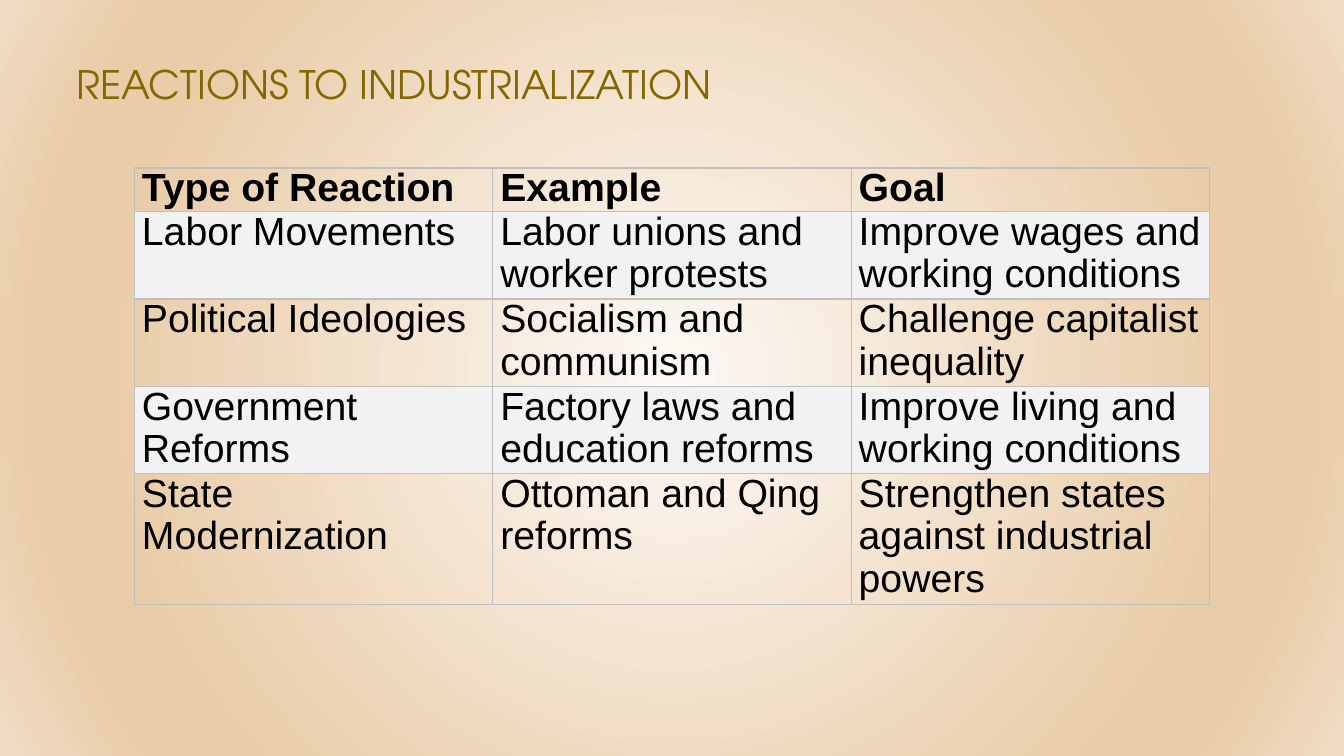
from dataclasses import dataclass

from lxml import etree
from pptx import Presentation
from pptx.dml.color import RGBColor
from pptx.enum.text import MSO_ANCHOR, PP_ALIGN
from pptx.oxml.ns import qn
from pptx.util import Pt

LEFT, TOP, BOTTOM = PP_ALIGN.LEFT, MSO_ANCHOR.TOP, MSO_ANCHOR.BOTTOM


@dataclass(frozen=True)
class Theme:
    title_font: str = "TeX Gyre Adventor"
    body_font: str = "Arial"
    size: int = 28
    title_color: str = "846700"
    text_color: str = "000000"
    band: str = "F2F2F2"
    border: str = "BFBFBF"
    glow: tuple = ((0, "FDF9F5"), (74, "E9CCA8"), (83, "E9CCA8"), (100, "F0DDC5"))


class Deck:
    """Builds slide elements in one theme, with lengths in points."""

    def __init__(self, prs, theme):
        self.theme = theme
        self.s = prs.slides.add_slide(prs.slide_layouts[5])

    def background(self):
        self.s.background.fill.gradient()
        grad = next(self.s.element.iter(qn("a:gradFill")))
        for child in list(grad):
            grad.remove(child)
        stops = etree.SubElement(grad, qn("a:gsLst"))
        for pos, color in self.theme.glow:
            gs = etree.SubElement(stops, qn("a:gs"), pos=str(pos * 1000))
            etree.SubElement(gs, qn("a:srgbClr"), val=color)
        circle = etree.SubElement(grad, qn("a:path"), path="circle")
        etree.SubElement(circle, qn("a:fillToRect"), l="50000", t="50000", r="50000", b="50000")

    def add_text(self, tf, text, font, color, spacing, bold=False):
        tf.word_wrap = True
        p = tf.paragraphs[0]
        p.alignment = LEFT
        p.line_spacing = spacing
        p.space_before = Pt(0)
        r = p.add_run()
        r.text = text
        r.font.name = font
        r.font.size = Pt(self.theme.size)
        r.font.bold = bold
        r.font.color.rgb = RGBColor.from_string(color)

    def title(self, text, x, y, w, h):
        sp = self.s.shapes.title
        sp.left, sp.top, sp.width, sp.height = Pt(x), Pt(y), Pt(w), Pt(h)
        sp.text_frame.vertical_anchor = BOTTOM
        self.add_text(sp.text_frame, text, self.theme.title_font, self.theme.title_color, 0.9)

    def borders(self, cell):
        tc_pr = cell._tc.get_or_add_tcPr()
        for side in ("lnL", "lnR", "lnT", "lnB"):
            ln = etree.SubElement(tc_pr, qn(f"a:{side}"), w=str(Pt(1)))
            fill = etree.SubElement(ln, qn("a:solidFill"))
            etree.SubElement(fill, qn("a:srgbClr"), val=self.theme.border)

    def table(self, rows, lines, x, y, w, line_height):
        n_cols = len(rows[0])
        frame = self.s.shapes.add_table(
            len(rows), n_cols, Pt(x), Pt(y), Pt(w), Pt(sum(lines) * line_height))
        table = frame.table
        table.horz_banding = False
        for col in table.columns:
            col.width = Pt(w / n_cols)
        for i, row in enumerate(rows):
            table.rows[i].height = Pt(lines[i] * line_height)
            for j, text in enumerate(row):
                cell = table.cell(i, j)
                cell.margin_left = cell.margin_right = Pt(5.4)
                cell.margin_top = cell.margin_bottom = Pt(0)
                cell.vertical_anchor = TOP
                self.borders(cell)
                if i % 2:
                    cell.fill.solid()
                    cell.fill.fore_color.rgb = RGBColor.from_string(self.theme.band)
                else:
                    cell.fill.background()
                self.add_text(cell.text_frame, text, self.theme.body_font,
                              self.theme.text_color, 0.97, bold=i == 0)


def main():
    prs = Presentation()
    prs.slide_width, prs.slide_height = Pt(960), Pt(540)
    deck = Deck(prs, Theme())
    deck.background()
    deck.title("REACTIONS TO INDUSTRIALIZATION", 47.5, 18, 840, 63)
    reactions = [
        ("Type of Reaction", "Example", "Goal"),
        ("Labor Movements", "Labor unions and worker protests",
         "Improve wages and working conditions"),
        ("Political Ideologies", "Socialism and communism",
         "Challenge capitalist inequality"),
        ("Government Reforms", "Factory laws and education reforms",
         "Improve living and working conditions"),
        ("State Modernization", "Ottoman and Qing reforms",
         "Strengthen states against industrial powers"),
    ]
    deck.table(reactions, (1, 2, 2, 2, 3), 96, 120, 768, 31.2)
    prs.save("out.pptx")


if __name__ == "__main__":
    main()
